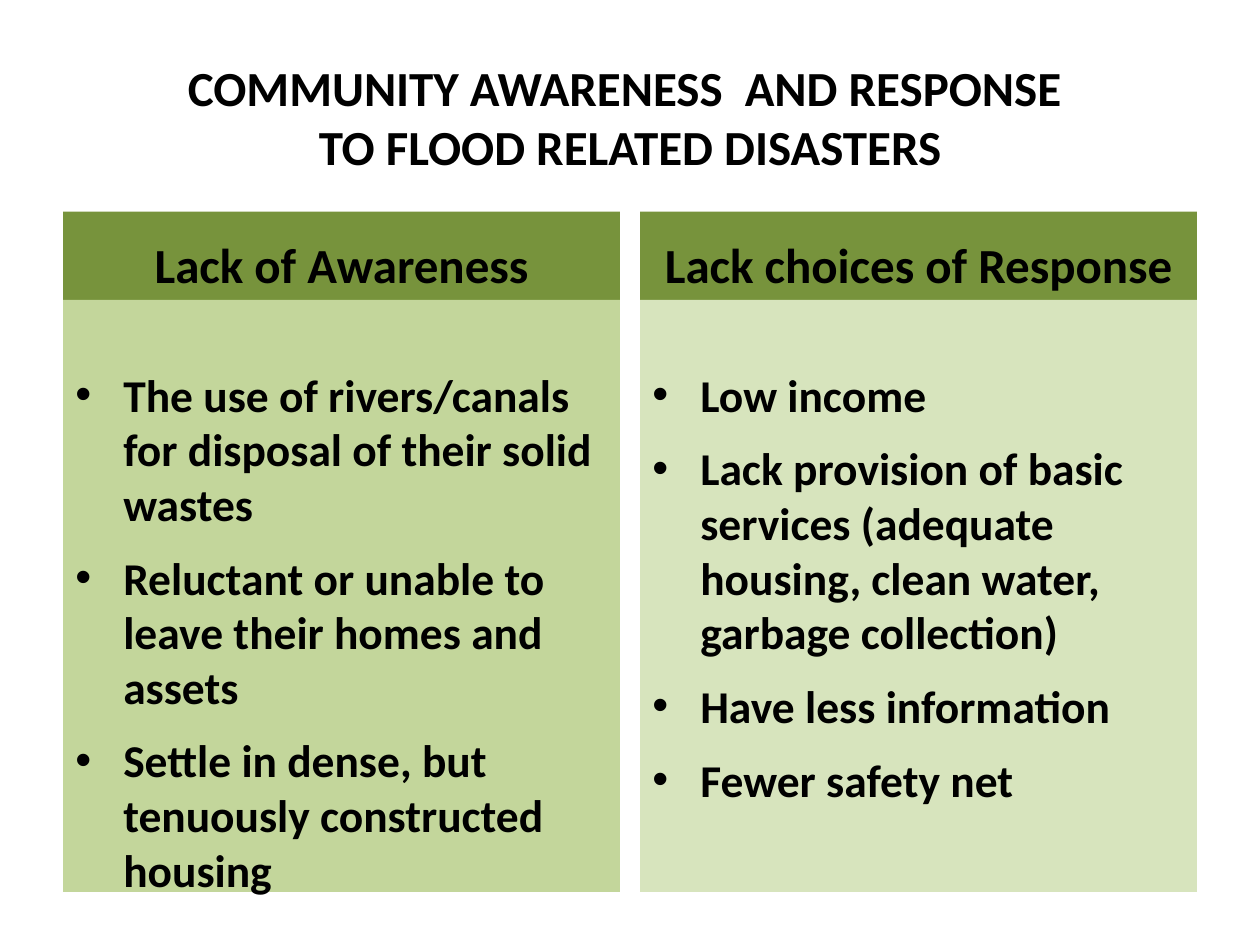
from lxml.etree import SubElement
from pptx import Presentation
from pptx.dml.color import RGBColor
from pptx.enum.shapes import MSO_SHAPE
from pptx.enum.text import MSO_ANCHOR, PP_ALIGN
from pptx.oxml.ns import qn
from pptx.util import Inches, Pt

COLORS = {
    "text": "000000",
    "header": "77933C",
    "awareness": "C3D69B",
    "response": "D7E4BD",
}
MARGIN, COLUMN_WIDTH, COLUMN_PITCH = 0.5, 4.42, 4.58
HEADER_TOP, HEADER_HEIGHT, BODY_HEIGHT = 1.68, 0.7, 4.7

COLUMNS = [
    ("Lack of Awareness", "awareness", [
        "The use of rivers/canals for disposal of their solid wastes",
        "Reluctant or unable to leave their homes and assets",
        "Settle in dense, but tenuously constructed housing",
    ]),
    ("Lack choices of Response", "response", [
        "Low income",
        "Lack provision of basic services (adequate housing, clean water, garbage collection)",
        "Have less information",
        "Fewer safety net",
    ]),
]


def style_paragraph(paragraph, text, size, align):
    """Fill a paragraph with bold text."""
    paragraph.text = text
    paragraph.alignment = align
    font = paragraph.font
    font.name, font.size, font.bold = "Calibri", Pt(size), True
    font.color.rgb = RGBColor.from_string(COLORS["text"])


def add_bullet(paragraph):
    """Give a paragraph a hanging round bullet."""
    properties = paragraph._p.get_or_add_pPr()
    properties.set("marL", str(Inches(0.38)))
    properties.set("indent", str(-Inches(0.38)))
    SubElement(properties, qn("a:buFont")).set("typeface", "Arial")
    SubElement(properties, qn("a:buChar")).set("char", "•")


def add_panel(slide, left, top, height, color):
    """Add a plain filled rectangle and return its text frame."""
    panel = slide.shapes.add_shape(
        MSO_SHAPE.RECTANGLE, Inches(left), Inches(top), Inches(COLUMN_WIDTH), Inches(height))
    panel.shadow.inherit = False
    panel.fill.solid()
    panel.fill.fore_color.rgb = RGBColor.from_string(COLORS[color])
    panel.line.fill.background()
    panel.text_frame.word_wrap = True
    return panel.text_frame


def add_title(slide, text):
    """Add the centred slide title."""
    title = slide.shapes.add_textbox(Inches(MARGIN), Inches(0.3), Inches(9), Inches(1.25))
    frame = title.text_frame
    frame.word_wrap = True
    frame.vertical_anchor = MSO_ANCHOR.MIDDLE
    style_paragraph(frame.paragraphs[0], text, 28, PP_ALIGN.CENTER)


def add_column(slide, left, heading, color, points):
    """Add a heading panel with its bulleted panel below."""
    header = add_panel(slide, left, HEADER_TOP, HEADER_HEIGHT, "header")
    header.vertical_anchor = MSO_ANCHOR.BOTTOM
    style_paragraph(header.paragraphs[0], heading, 28, PP_ALIGN.CENTER)

    body = add_panel(slide, left, HEADER_TOP + HEADER_HEIGHT, BODY_HEIGHT, color)
    body.vertical_anchor = MSO_ANCHOR.TOP
    body.margin_top, body.margin_bottom = Inches(0.53), 0
    for index, point in enumerate(points):
        paragraph = body.add_paragraph() if index else body.paragraphs[0]
        style_paragraph(paragraph, point, 26, PP_ALIGN.LEFT)
        paragraph.space_after = Pt(11)
        add_bullet(paragraph)


def main():
    """Build and save the slide."""
    presentation = Presentation()
    presentation.slide_width, presentation.slide_height = Inches(10), Inches(7.5)
    slide = presentation.slides.add_slide(presentation.slide_layouts[6])
    add_title(slide, "COMMUNITY AWARENESS  AND RESPONSE \vTO FLOOD RELATED DISASTERS")
    for index, (heading, color, points) in enumerate(COLUMNS):
        add_column(slide, MARGIN + index * COLUMN_PITCH, heading, color, points)
    presentation.save("out.pptx")


if __name__ == "__main__":
    main()
